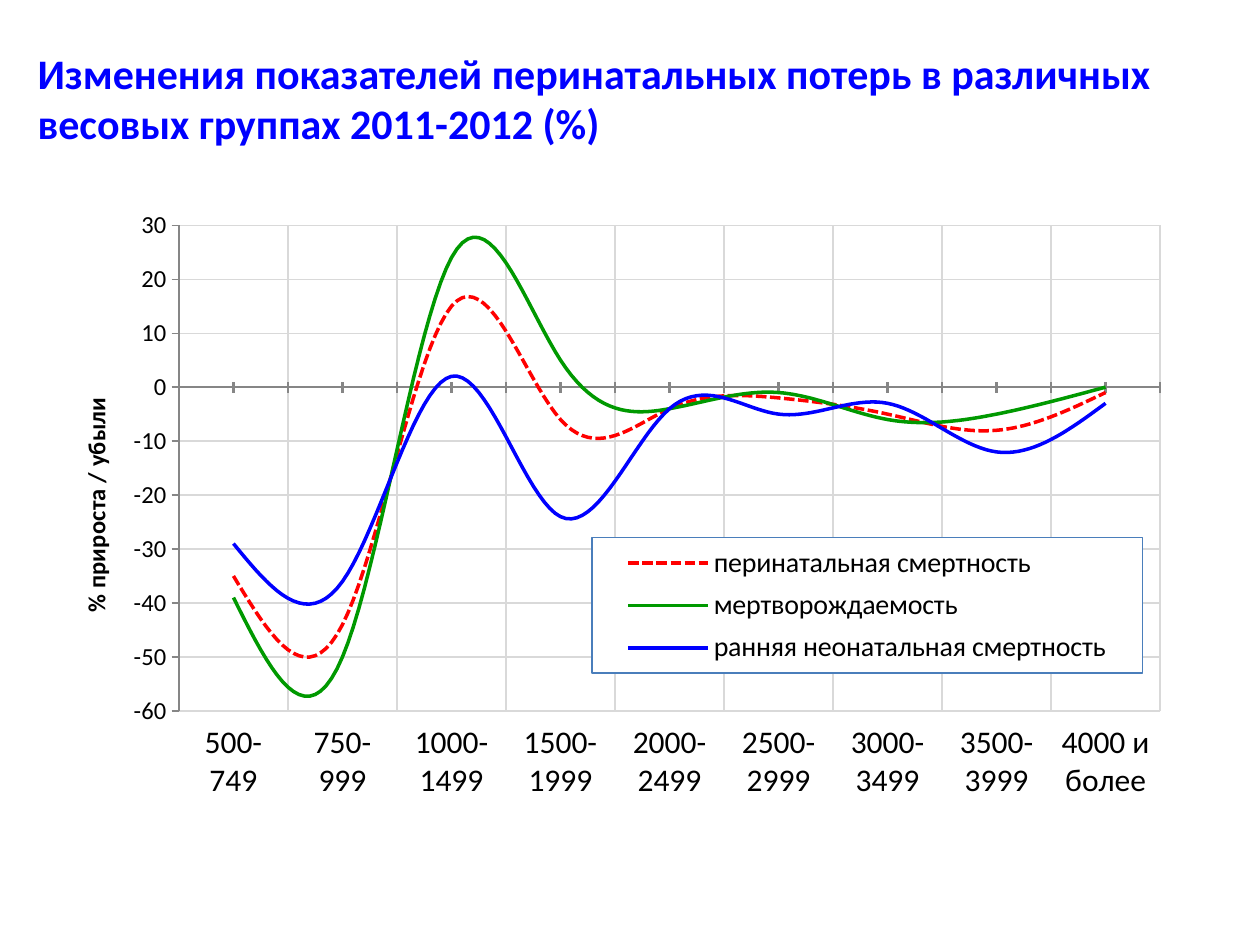
from dataclasses import dataclass

from lxml import etree
from pptx import Presentation
from pptx import util as u
from pptx.chart.data import CategoryChartData
from pptx.dml.color import RGBColor
from pptx.enum import chart as charts, dml, text
from pptx.oxml.ns import qn

FONT = "Calibri"
BLACK, BLUE, AXIS_GRAY, GRID_GRAY = "000000", "0000FF", "868686", "D9D9D9"
WEIGHT_GROUPS = ["500-749", "750-999", "1000-1499", "1500-1999", "2000-2499",
                 "2500-2999", "3000-3499", "3500-3999", "4000 и более"]


@dataclass
class Rate:
    name: str
    changes: list[int]
    color: str
    dash: dml.MSO_LINE | None = None


RATES = [
    Rate("перинатальная смертность", [-35, -44, 15, -6, -4, -2, -5, -8, -1],
         "FF0000", dml.MSO_LINE.SQUARE_DOT),
    Rate("мертворождаемость", [-39, -50, 24, 5, -4, -1, -6, -5, 0], "009900"),
    Rate("ранняя неонатальная смертность", [-29, -36, 2, -24, -4, -5, -3, -12, -3], BLUE),
]


def rgb(color: str) -> RGBColor:
    return RGBColor.from_string(color)


def format_font(font, size: float, color: str = BLACK, bold: bool = False) -> None:
    font.name = FONT
    font.size = u.Pt(size)
    font.bold = bold
    font.color.rgb = rgb(color)


def format_line(line, color: str, width: float) -> None:
    line.color.rgb = rgb(color)
    line.width = u.Pt(width)


def write(frame, content: str, **style) -> None:
    run = frame.paragraphs[0].add_run()
    run.text = content
    format_font(run.font, **style)


def manual_layout(x: float, y: float, width: float, height: float, inner: bool = False):
    """Return a c:layout element; all measures are fractions of the chart."""
    layout = etree.Element(qn("c:layout"))
    manual = etree.SubElement(layout, qn("c:manualLayout"))
    settings = [("layoutTarget", "inner")] if inner else []
    settings += [("xMode", "edge"), ("yMode", "edge"),
                 ("x", x), ("y", y), ("w", width), ("h", height)]
    for tag, value in settings:
        etree.SubElement(manual, qn(f"c:{tag}")).set("val", str(value))
    return layout


def format_axis(axis, label_size: float) -> None:
    axis.has_major_gridlines = True
    format_line(axis.major_gridlines.format.line, GRID_GRAY, 0.75)
    format_line(axis.format.line, AXIS_GRAY, 0.75)
    format_font(axis.tick_labels.font, label_size)


def format_legend(chart) -> None:
    chart.has_legend = True
    legend = chart.legend
    legend.position = charts.XL_LEGEND_POSITION.TOP
    legend.include_in_layout = False
    format_font(legend.font, 16)
    element = legend._element
    for old in element.findall(qn("c:layout")):
        element.remove(old)
    element.find(qn("c:legendPos")).addnext(manual_layout(0.47, 0.51, 0.5, 0.2))
    # The public API has no fill or outline for a legend.
    properties = etree.Element(qn("c:spPr"))
    outline = etree.Element(qn("a:ln"), w=str(u.Pt(0.75)))
    for parent, color in ((properties, "FFFFFF"), (outline, "4A7EBB")):
        fill = etree.SubElement(parent, qn("a:solidFill"))
        etree.SubElement(fill, qn("a:srgbClr"), val=color)
    properties.append(outline)
    element.find(qn("c:txPr")).addprevious(properties)


def add_rate_chart(slide) -> None:
    data = CategoryChartData()
    data.categories = WEIGHT_GROUPS
    for rate in RATES:
        data.add_series(rate.name, rate.changes)
    chart = slide.shapes.add_chart(
        charts.XL_CHART_TYPE.LINE, u.Inches(0.59), u.Inches(1.53),
        u.Inches(8.74), u.Inches(5.37), data).chart
    format_font(chart.font, 14)
    chart.has_title = False
    plot = chart.plots[0]
    plot.vary_by_categories = False
    for series, rate in zip(plot.series, RATES):
        series.smooth = True
        series.marker.style = charts.XL_MARKER_STYLE.NONE
        format_line(series.format.line, rate.color, 2)
        if rate.dash is not None:
            series.format.line.dash_style = rate.dash

    categories = chart.category_axis
    format_axis(categories, 18)
    categories.format.line.width = u.Pt(1.5)
    categories.tick_label_position = charts.XL_TICK_LABEL_POSITION.LOW
    categories.major_tick_mark = charts.XL_TICK_MARK.NONE
    categories.minor_tick_mark = charts.XL_TICK_MARK.CROSS

    values = chart.value_axis
    format_axis(values, 14)
    values.minimum_scale, values.maximum_scale, values.major_unit = -60, 30, 10
    values.major_tick_mark = charts.XL_TICK_MARK.OUTSIDE
    write(values.axis_title.text_frame, "% прироста / убыли", size=14, bold=True)

    format_legend(chart)
    plot_area = chart._chartSpace.chart.plotArea
    for old in plot_area.findall(qn("c:layout")):
        plot_area.remove(old)
    plot_area.insert(0, manual_layout(0.095, 0.048, 0.891, 0.718, inner=True))


def main() -> None:
    presentation = Presentation()
    presentation.slide_width = u.Inches(10)
    presentation.slide_height = u.Inches(7.5)
    slide = presentation.slides.add_slide(presentation.slide_layouts[6])
    title = slide.shapes.add_textbox(
        u.Inches(0.2), u.Inches(0.36), u.Inches(9.33), u.Inches(0.83)).text_frame
    title.word_wrap = True
    title.vertical_anchor = text.MSO_ANCHOR.MIDDLE
    write(title, "Изменения показателей перинатальных потерь в различных "
                 "весовых группах 2011-2012 (%)", size=24, color=BLUE, bold=True)
    add_rate_chart(slide)
    presentation.save("out.pptx")


if __name__ == "__main__":
    main()
